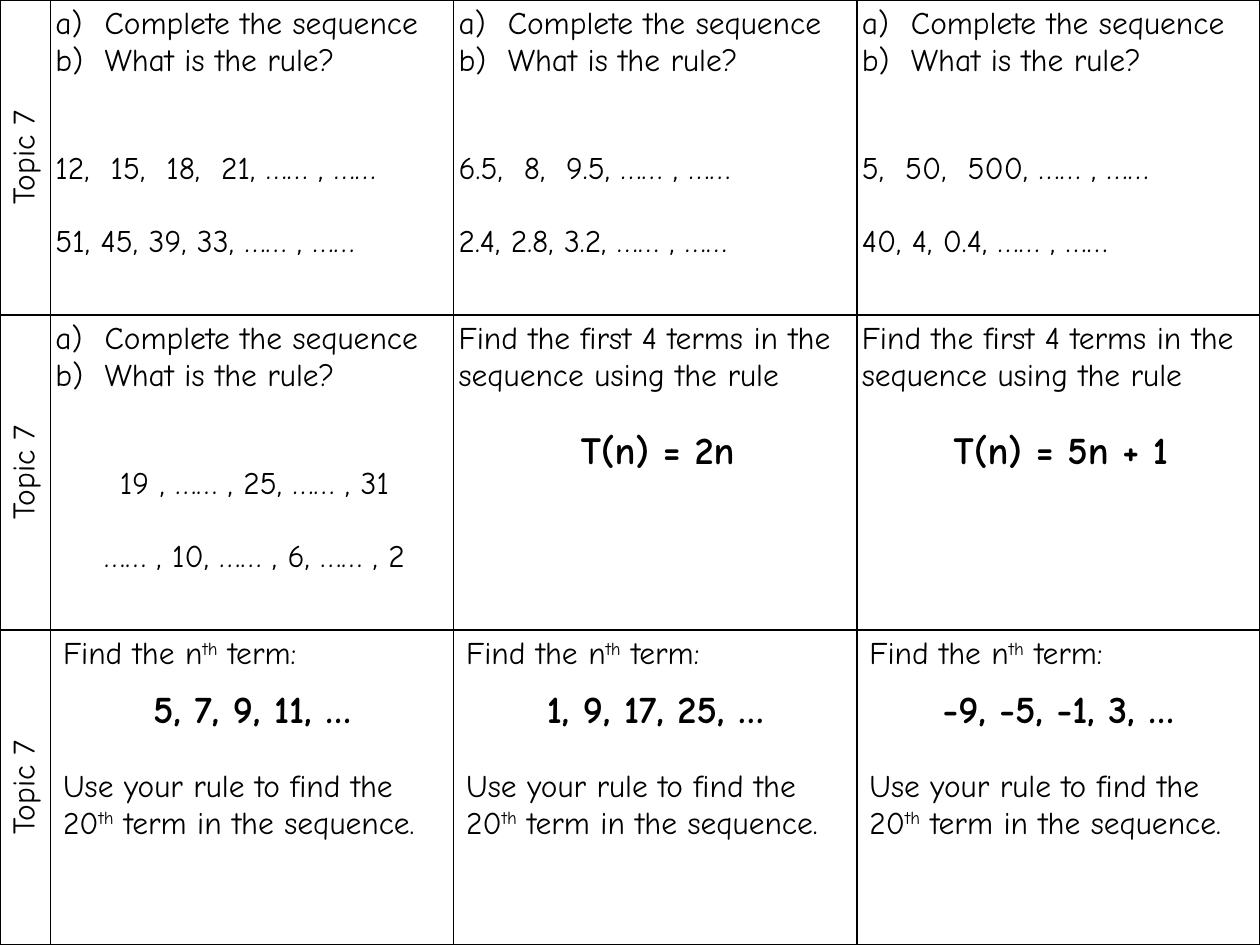
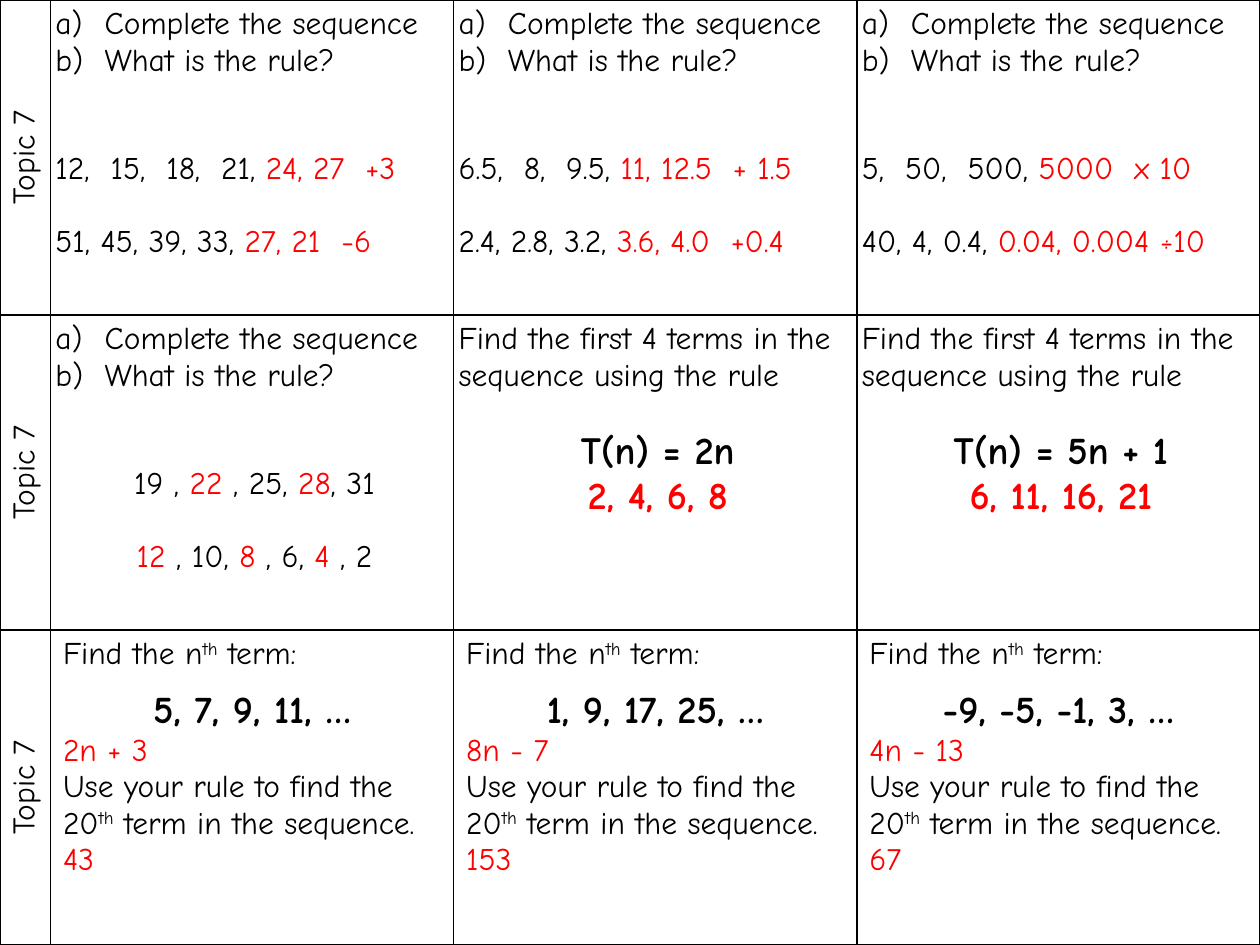
"""Build a sequences revision grid: one question slide and one answer slide."""
from collections import namedtuple
from dataclasses import dataclass

from lxml import etree
from pptx import Presentation
from pptx import util as u
from pptx.dml.color import RGBColor
from pptx.enum import text
from pptx.oxml.ns import qn

Gap = namedtuple("Gap", "blank answer")
Superscript = namedtuple("Superscript", "text")


@dataclass
class Line:
    runs: list
    size: int = 18
    bold: bool = False
    centred: bool = False
    numbered: bool = False
    before: float = 0


BLACK = RGBColor(0x00, 0x00, 0x00)
RED = RGBColor(0xFF, 0x00, 0x00)
FONT = "Comic Neue"
BODY_LINE = 20.7
SMALL_LINE = 9.2
LABEL_WIDTH, QUESTION_WIDTH, ROW_HEIGHT = 0.4, 3.2, 2.5
NUMBER_INDENT = u.Inches(0.39)
DOTS = "……"
TWO_DOTS = "…… , ……"
TOPIC = "Topic 7"


def complete_sequence(first, second, centred=False):
    """Return the lines of a question with two sequences to complete."""
    return [
        Line(["Complete the sequence"], numbered=True),
        Line(["What is the rule?"], numbered=True),
        Line(first, centred=centred, before=2 * BODY_LINE),
        Line(second, centred=centred, before=BODY_LINE),
    ]


def first_terms(rule, terms):
    """Return the lines of a question asking for the first four terms."""
    return [
        Line(["Find the first 4 terms in the sequence using the rule"]),
        Line([rule], size=22, bold=True, centred=True, before=BODY_LINE),
        Line([Gap("", terms)], size=22, bold=True, centred=True),
    ]


def nth_term(sequence, rule, twentieth):
    """Return the lines of a question asking for the nth and 20th terms."""
    return [
        Line(["Find the n", Superscript("th"), " term:"]),
        Line([sequence], size=22, bold=True, centred=True, before=SMALL_LINE),
        Line([Gap("", rule)]),
        Line(["Use your rule to find the 20", Superscript("th"), " term in the sequence."]),
        Line([Gap("", twentieth)]),
    ]


QUESTIONS = [
    [
        complete_sequence(["12,  15,  18,  21, ", Gap(TWO_DOTS, "24, 27  +3")],
                          ["51, 45, 39, 33, ", Gap(TWO_DOTS, "27, 21  -6")]),
        complete_sequence(["6.5,  8,  9.5, ", Gap(TWO_DOTS, "11, 12.5  + 1.5")],
                          ["2.4, 2.8, 3.2, ", Gap(TWO_DOTS, "3.6, 4.0  +0.4")]),
        complete_sequence(["5,  50,  500, ", Gap(TWO_DOTS, "5000  x 10")],
                          ["40, 4, 0.4, ", Gap(TWO_DOTS, "0.04, 0.004 ÷10")]),
    ],
    [
        complete_sequence(
            ["19 , ", Gap(DOTS, "22"), " , 25, ", Gap(DOTS + " ", "28"), ", 31"],
            [Gap(DOTS, "12"), " , 10, ", Gap(DOTS, "8"), " , 6, ", Gap(DOTS, "4"), " , 2"],
            centred=True),
        first_terms("T(n) = 2n", "2, 4, 6, 8"),
        first_terms("T(n) = 5n + 1", "6, 11, 16, 21"),
    ],
    [
        nth_term("5, 7, 9, 11, …", "2n + 3", "43"),
        nth_term("1, 9, 17, 25, …", "8n - 7", "153"),
        nth_term("-9, -5, -1, 3, …", "4n - 13", "67"),
    ],
]
TIGHT_ROWS = (0, 1)


def add_run(paragraph, part, line, show_answers):
    """Add one formatted run for a plain, gap or superscript part."""
    run = paragraph.add_run()
    colour = BLACK
    if isinstance(part, Gap):
        run.text = part.answer if show_answers else part.blank
        colour = RED if show_answers else BLACK
    elif isinstance(part, Superscript):
        run.text = part.text
        run._r.get_or_add_rPr().set("baseline", "30000")
    else:
        run.text = part
    run.font.name = FONT
    run.font.size = u.Pt(line.size)
    run.font.bold = line.bold
    run.font.color.rgb = colour


def number_paragraph(paragraph):
    """Give a paragraph an a), b) number with a hanging indent."""
    properties = paragraph._p.get_or_add_pPr()
    properties.set("marL", str(NUMBER_INDENT))
    properties.set("indent", str(-NUMBER_INDENT))
    etree.SubElement(properties, qn("a:buAutoNum"), type="alphaLcParenR")


def write_cell(cell, lines, show_answers):
    """Write the lines, keeping room where a hidden answer line stands."""
    frame = cell.text_frame
    paragraph = frame.paragraphs[0]
    hidden_height = 0
    for index, line in enumerate(lines):
        only_answer = isinstance(line.runs[0], Gap) and not line.runs[0].blank
        if only_answer and not show_answers:
            hidden_height = BODY_LINE
            continue
        if index:
            paragraph = frame.add_paragraph()
        if line.numbered:
            number_paragraph(paragraph)
        paragraph.alignment = text.PP_ALIGN.CENTER if line.centred else text.PP_ALIGN.LEFT
        if line.before + hidden_height:
            paragraph.space_before = u.Pt(line.before + hidden_height)
        hidden_height = 0
        for part in line.runs:
            add_run(paragraph, part, line, show_answers)


def style_cell(cell):
    """Clear the fill and draw a thin black border on every side."""
    cell.fill.background()
    properties = cell._tc.get_or_add_tcPr()
    for index, side in enumerate(("lnL", "lnR", "lnT", "lnB")):
        border = etree.Element(qn(f"a:{side}"), w=str(u.Pt(1)))
        fill = etree.SubElement(border, qn("a:solidFill"))
        etree.SubElement(fill, qn("a:srgbClr"), val=str(BLACK))
        properties.insert(index, border)


def add_grid_slide(presentation, show_answers):
    """Add a slide filled by the question grid."""
    slide = presentation.slides.add_slide(presentation.slide_layouts[6])
    table = slide.shapes.add_table(
        len(QUESTIONS), 4, 0, 0, presentation.slide_width, presentation.slide_height).table
    table.first_row = table.horz_banding = False
    for column, width in zip(table.columns, [LABEL_WIDTH] + [QUESTION_WIDTH] * 3):
        column.width = u.Inches(width)
    for row_index, questions in enumerate(QUESTIONS):
        table.rows[row_index].height = u.Inches(ROW_HEIGHT)
        label = table.cell(row_index, 0)
        style_cell(label)
        label._tc.get_or_add_tcPr().set("vert", "vert270")
        write_cell(label, [Line([TOPIC], centred=True)], show_answers)
        for column_index, lines in enumerate(questions, start=1):
            cell = table.cell(row_index, column_index)
            style_cell(cell)
            if row_index in TIGHT_ROWS:
                cell.margin_left, cell.margin_right = u.Inches(0.04), 0
            write_cell(cell, lines, show_answers)


def main():
    """Build and save the presentation."""
    presentation = Presentation()
    presentation.slide_width = u.Inches(10)
    presentation.slide_height = u.Inches(7.5)
    for show_answers in (False, True):
        add_grid_slide(presentation, show_answers)
    presentation.save("out.pptx")


if __name__ == "__main__":
    main()
